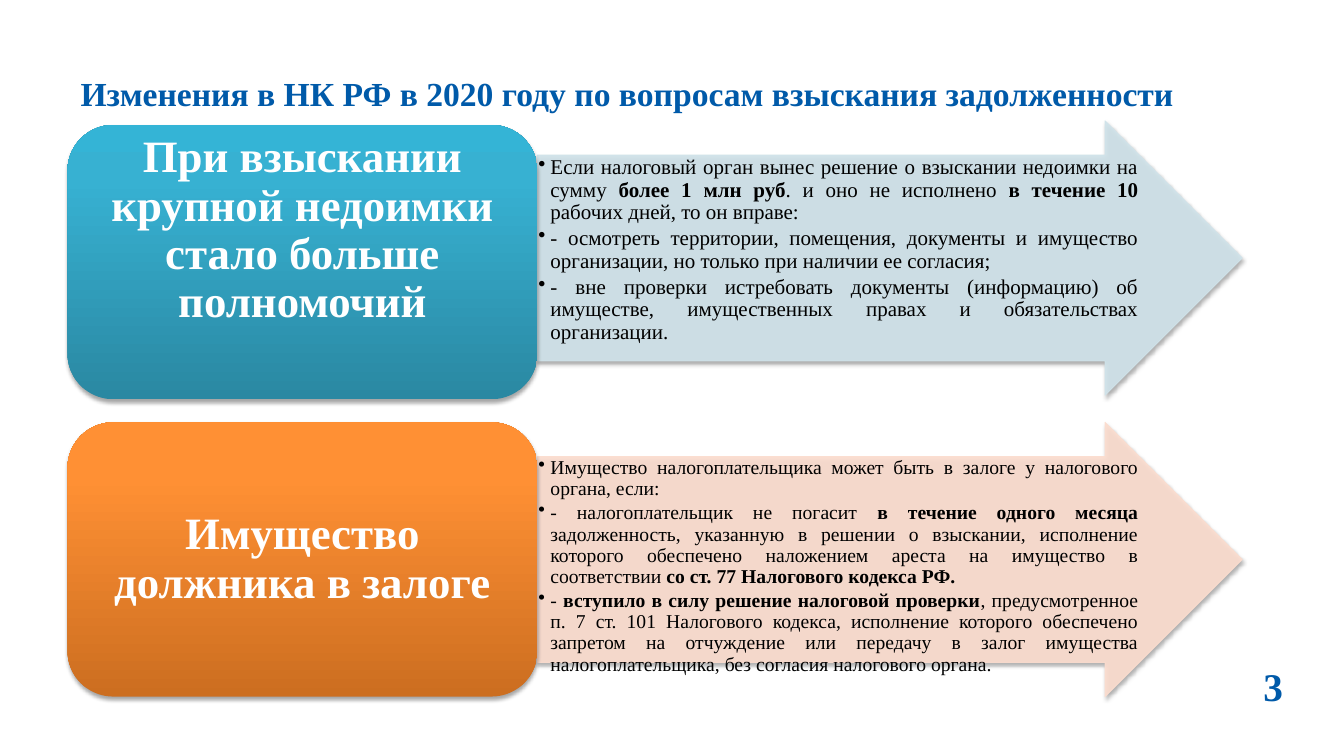
from dataclasses import dataclass

from lxml.etree import SubElement
from pptx import Presentation
from pptx.dml.color import RGBColor
from pptx.enum.shapes import MSO_SHAPE as SHAPE
from pptx.enum.text import MSO_ANCHOR as ANCHOR, PP_ALIGN as ALIGN
from pptx.oxml.ns import qn
from pptx.util import Inches, Pt

FONT = "Times New Roman"
COLORS = {
    "accent": "005AA9", "text": "000000", "white": "FFFFFF", "shadow": "000000",
    "blue_pale": "D0E3EA", "orange_pale": "FCDDCF",
}
GRADIENTS = {
    "blue": ((0, "2A88A2"), (80, "37B1D2"), (100, "34B4D6")),
    "orange": ((0, "CC6E20"), (80, "FF9034"), (100, "FF9136")),
}
CARD_X, CARD_W, ROW_H = 0.67, 4.66, 2.72
ARROW_X, ARROW_W = CARD_X + CARD_W, 6.99


@dataclass
class Row:
    card_y: float
    arrow_y: float
    gradient: str
    pale: str
    heading: str
    heading_h: float
    size: int
    points: list[str]  # ** switches bold on and off


ROWS = [
    Row(1.24, 1.2, "blue", "blue_pale",
        "При взыскании крупной недоимки стало больше полномочий", 1.84, 15, [
            "Если налоговый орган вынес решение о взыскании недоимки на сумму "
            "**более 1 млн руб**. и оно не исполнено **в течение 10 **рабочих дней, "
            "то он вправе:",
            "- осмотреть территории, помещения, документы и имущество организации, "
            "но только при наличии ее согласия;",
            "- вне проверки истребовать документы (информацию) об имуществе, "
            "имущественных правах и обязательствах организации.",
        ]),
    Row(4.19, 4.19, "orange", "orange_pale",
        "Имущество должника в залоге", 2.46, 14, [
            "Имущество налогоплательщика может быть в залоге у налогового органа, если:",
            "- налогоплательщик не погасит **в течение одного месяца **задолженность, "
            "указанную в решении о взыскании, исполнение которого обеспечено наложением "
            "ареста на имущество в соответствии **со ст. 77 Налогового кодекса РФ.**",
            "- **вступило в силу решение налоговой проверки**, предусмотренное п. 7 "
            "ст. 101 Налогового кодекса, исполнение которого обеспечено запретом на "
            "отчуждение или передачу в залог имущества налогоплательщика, без согласия "
            "налогового органа.",
        ]),
]


def add_bullet(p) -> None:
    pPr = p._p.get_or_add_pPr()
    pPr.set("marL", str(Inches(0.12)))
    pPr.set("indent", str(Inches(-0.12)))
    SubElement(pPr, qn("a:buChar"), char="•")


def add_text(slide, text: str | list[str], x: float, y: float, w: float, h: float, *,
             size: int, color: str, bold: bool = False, align=ALIGN.LEFT,
             anchor=ANCHOR.MIDDLE, margins=(0.13, 0.06), spacing: float = 1.0,
             after: float = 0, bullets: bool = False, wrap: bool = True) -> None:
    tf = slide.shapes.add_textbox(Inches(x), Inches(y), Inches(w), Inches(h)).text_frame
    tf.word_wrap = wrap
    tf.vertical_anchor = anchor
    tf.margin_left = tf.margin_right = Inches(margins[0])
    tf.margin_top = tf.margin_bottom = Inches(margins[1])
    for i, line in enumerate([text] if isinstance(text, str) else text):
        p = tf.add_paragraph() if i else tf.paragraphs[0]
        if bullets:
            add_bullet(p)
        p.alignment = align
        p.line_spacing = spacing
        p.space_after = Pt(after)
        for j, part in enumerate(line.split("**")):
            if part:
                r = p.add_run()
                r.text = part
                r.font.name = FONT
                r.font.size = Pt(size)
                r.font.bold = bold or j % 2 == 1
                r.font.color.rgb = RGBColor.from_string(COLORS[color])


def add_shape(slide, kind, x: float, y: float, w: float, h: float):
    """Add a preset shape with a soft shadow below it."""
    s = slide.shapes.add_shape(kind, Inches(x), Inches(y), Inches(w), Inches(h))
    s.shadow.inherit = False
    effects = s._element.spPr.find(qn("a:effectLst"))
    shadow = SubElement(effects, qn("a:outerShdw"), blurRad=str(Pt(3.1)),
                        dist=str(Pt(1.8)), dir="5400000", rotWithShape="0")
    clr = SubElement(shadow, qn("a:srgbClr"), val=COLORS["shadow"])
    SubElement(clr, qn("a:alpha"), val="35000")
    return s


def add_arrow(slide, row: Row) -> None:
    s = add_shape(slide, SHAPE.RIGHT_ARROW, ARROW_X, row.arrow_y, ARROW_W, ROW_H)
    s.adjustments[0], s.adjustments[1] = 0.75, 0.5
    s.line.width = Pt(0.75)
    for fill in (s.fill, s.line.fill):
        fill.solid()
        fill.fore_color.rgb = RGBColor.from_string(COLORS[row.pale])
    for clr in s._element.spPr.findall(".//" + qn("a:solidFill") + "/" + qn("a:srgbClr")):
        SubElement(clr, qn("a:alpha"), val="90000")


def add_card(slide, row: Row) -> None:
    s = add_shape(slide, SHAPE.ROUNDED_RECTANGLE, CARD_X, row.card_y, CARD_W, ROW_H)
    s.line.fill.background()
    s.fill.gradient()
    s.fill.gradient_angle = 90
    stops = s._element.spPr.find(".//" + qn("a:gsLst"))
    for gs in list(stops):
        stops.remove(gs)
    for pos, color in GRADIENTS[row.gradient]:
        gs = SubElement(stops, qn("a:gs"), pos=str(pos * 1000))
        SubElement(gs, qn("a:srgbClr"), val=color)


def add_row(slide, row: Row) -> None:
    add_arrow(slide, row)
    add_text(slide, row.points, ARROW_X, row.arrow_y + 0.34, 5.97, 2.04,
             size=row.size, color="text", align=ALIGN.JUSTIFY, anchor=ANCHOR.TOP,
             margins=(0.01, 0.01), spacing=0.9, after=row.size * 0.15, bullets=True)
    add_card(slide, row)
    add_text(slide, row.heading, CARD_X + 0.13, row.card_y + 0.13, 4.4, row.heading_h,
             size=32, color="white", bold=True, align=ALIGN.CENTER,
             margins=(0.13, 0), spacing=0.9)


def main() -> None:
    prs = Presentation()
    prs.slide_width, prs.slide_height = Inches(13.33), Inches(7.5)
    slide = prs.slides.add_slide(prs.slide_layouts[6])

    # Title
    add_text(slide, "Изменения в НК РФ в 2020 году по вопросам взыскания задолженности",
             CARD_X, 0.3, 12, 1.25, size=24, color="accent", bold=True)
    # Cards with arrows
    for row in ROWS:
        add_row(slide, row)
    # Slide number
    add_text(slide, "3", 12.42, 6.43, 0.4, 0.74, size=28, color="accent", bold=True,
             margins=(0.11, 0.06), wrap=False)

    prs.save("out.pptx")


if __name__ == "__main__":
    main()
